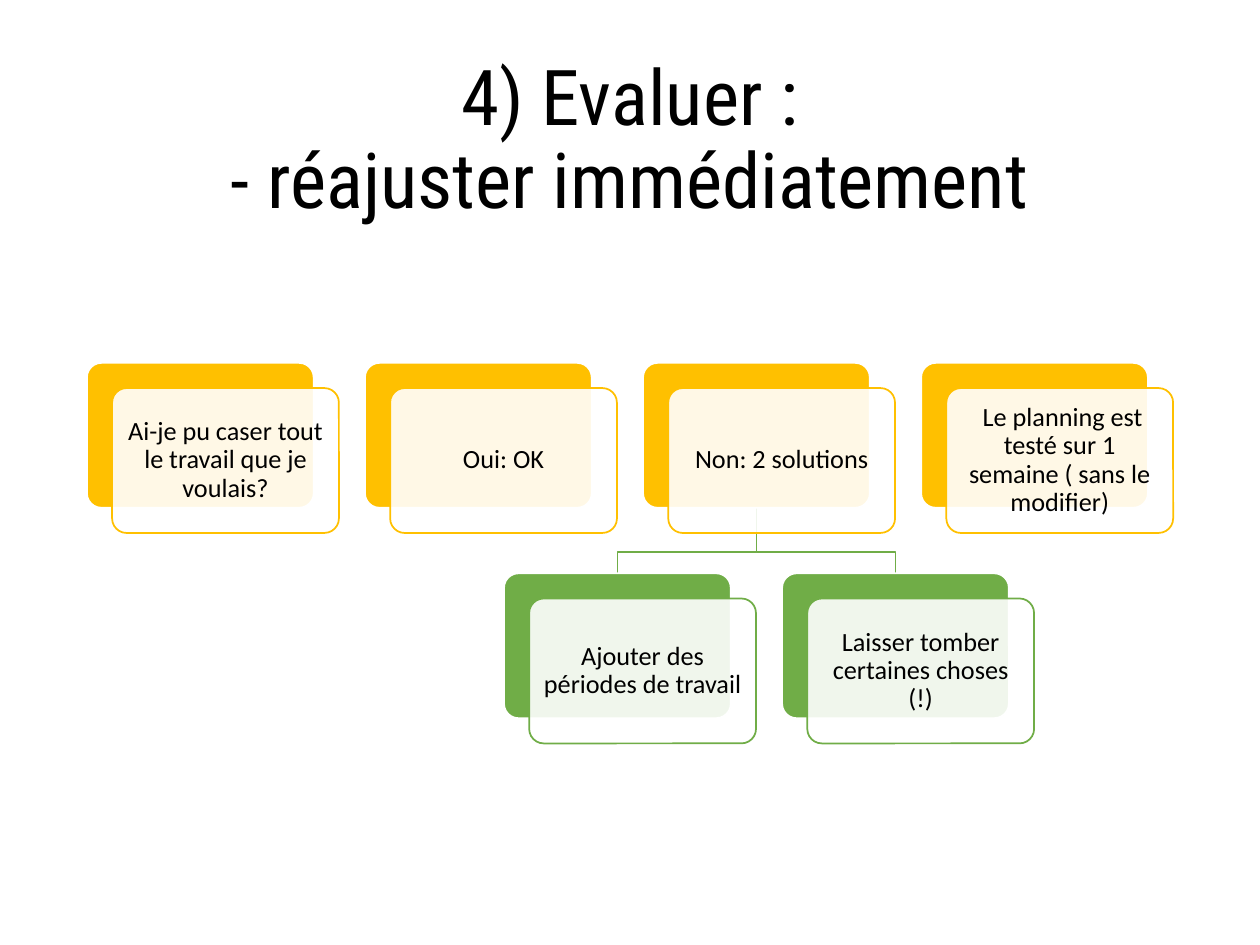
"""Build the slide on evaluating and adjusting a study plan."""
from lxml import etree
from pptx import Presentation, util as u
from pptx.dml.color import RGBColor
from pptx.enum import shapes, text
from pptx.oxml.ns import qn

TITLE = "4) Evaluer :\n- réajuster immédiatement"
HUES = {"gold": "FFC000", "green": "70AD47", "white": "FFFFFF", "black": "000000"}
CARDS = [
    ("Ai-je pu caser tout le travail que je voulais?", 0, 0, "gold"),
    ("Oui: OK", 1, 0, "gold"),
    ("Non: 2 solutions", 2, 0, "gold"),
    ("Ajouter des périodes de travail", 1.5, 1, "green"),
    ("Laisser tomber certaines choses (!)", 2.5, 1, "green"),
    (" Le planning est testé sur 1 semaine ( sans le modifier)", 3, 0, "gold"),
]
LINKS = [(2, 4), (2, 3)]
LEFT, TOP = 0.69, 2.88
STEP, DROP = 2.207, 1.67
WIDE, HIGH = 1.8, 1.15
SHIFT, BEND = 0.2, 0.17


def hue(name):
    return RGBColor.from_string(HUES[name])


def spot(card):
    return LEFT + STEP * card[1], TOP + DROP * card[2]


def style(para, size, font):
    para.alignment = text.PP_ALIGN.CENTER
    para.line_spacing = 0.9
    para.font.size = u.Pt(size)
    para.font.name = font
    para.font.color.rgb = hue("black")


def add_link(slide, start, end):
    x, y = spot(start)
    left, low = spot(end)
    x, y, left = x + WIDE / 2, y + HIGH, left + WIDE / 2
    pen = slide.shapes.build_freeform(u.Inches(x), u.Inches(y))
    turns = [(x, low - BEND), (left, low - BEND), (left, low)]
    pen.add_line_segments([(u.Inches(a), u.Inches(b)) for a, b in turns], close=False)
    link = pen.convert_to_shape()
    link.shadow.inherit = False
    link.fill.background()
    link.line.color.rgb = hue(end[3])
    link.line.width = u.Pt(1)


def add_box(slide, x, y, fill, line):
    box = slide.shapes.add_shape(
        shapes.MSO_SHAPE.ROUNDED_RECTANGLE,
        u.Inches(x), u.Inches(y), u.Inches(WIDE), u.Inches(HIGH))
    box.adjustments[0] = 0.1
    box.shadow.inherit = False
    box.fill.solid()
    box.fill.fore_color.rgb = hue(fill)
    box.line.color.rgb = hue(line)
    box.line.width = u.Pt(1)
    return box


def add_card(slide, card):
    x, y = spot(card)
    add_box(slide, x, y, card[3], "white")
    front = add_box(slide, x + SHIFT, y + SHIFT, "white", card[3])
    tint = front.fill._xPr.find(qn("a:solidFill"))[0]
    etree.SubElement(tint, qn("a:alpha"), val="90000")
    frame = front.text_frame
    frame.word_wrap = True
    frame.vertical_anchor = text.MSO_ANCHOR.MIDDLE
    frame.margin_left = frame.margin_right = u.Inches(0.06)
    frame.margin_top = frame.margin_bottom = u.Inches(0.06)
    para = frame.paragraphs[0]
    para.text = card[0]
    style(para, 15, "Calibri")


def main():
    deck = Presentation()
    deck.slide_width, deck.slide_height = u.Inches(10), u.Inches(7.5)
    slide = deck.slides.add_slide(deck.slide_layouts[5])
    title = slide.shapes.title
    title.left, title.top = u.Inches(LEFT), u.Inches(0.4)
    title.width, title.height = u.Inches(10 - 2 * LEFT), u.Inches(1.45)
    title.text_frame.vertical_anchor = text.MSO_ANCHOR.MIDDLE
    para = title.text_frame.paragraphs[0]
    para.text = TITLE
    style(para, 44, "Roboto Condensed")
    for start, end in LINKS:
        add_link(slide, CARDS[start], CARDS[end])
    for card in CARDS:
        add_card(slide, card)
    deck.save("out.pptx")


if __name__ == "__main__":
    main()
